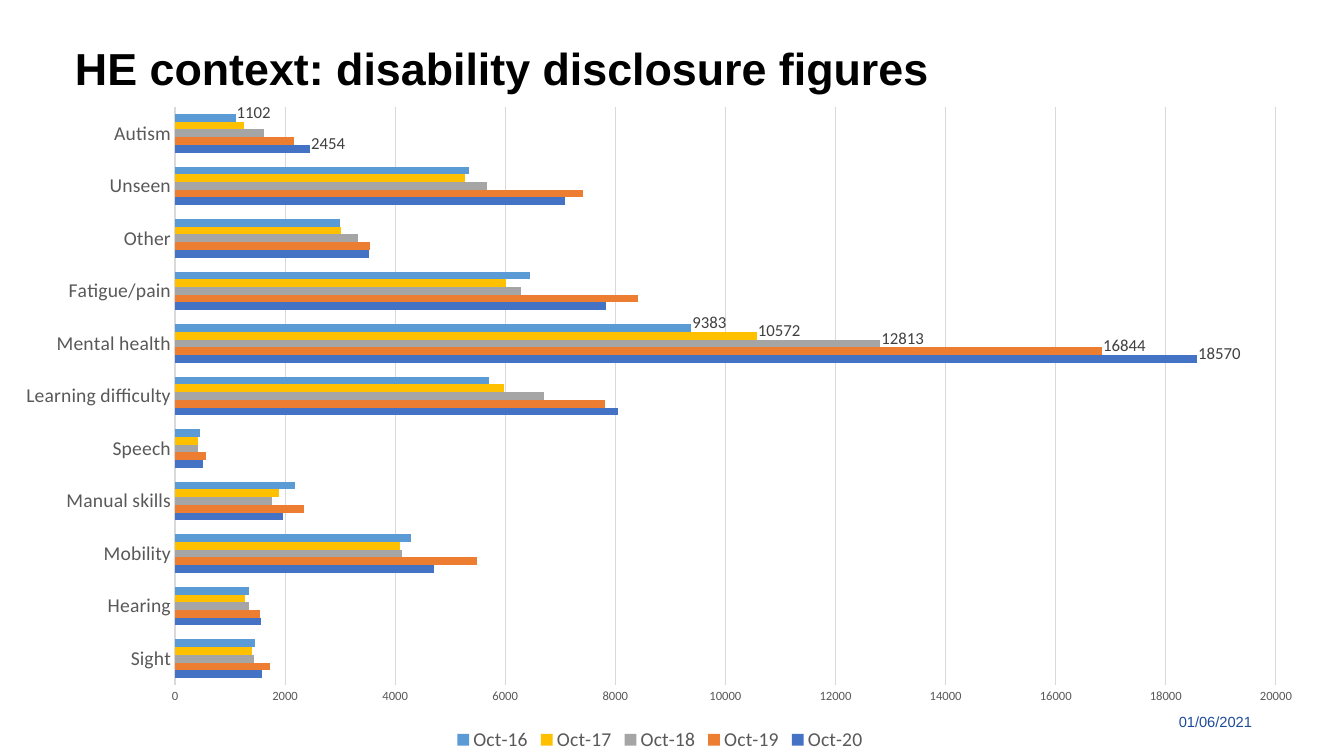
from dataclasses import dataclass

from lxml import etree
from pptx import Presentation
from pptx import util as u
from pptx.chart.data import CategoryChartData
from pptx.dml.color import RGBColor
from pptx.enum import chart as ch, text
from pptx.oxml.ns import qn

PX_PER_INCH = 100.8
GREY, GRID = "595959", "D9D9D9"
LABEL_SHIFT = (-3, -5)


@dataclass
class Box:
    left: int
    top: int
    width: int
    height: int

    def emu(self) -> list[u.Emu]:
        return [px(n) for n in (self.left, self.top, self.width, self.height)]


@dataclass
class Label:
    words: str
    box: Box
    size: float
    color: str
    bold: bool = False
    align: text.PP_ALIGN = text.PP_ALIGN.LEFT
    insets: tuple[int, int, int, int] = (10, 5, 10, 5)
    line_spacing: float = 1.0


@dataclass
class Year:
    name: str
    color: str
    counts: list[int]
    labelled: tuple[str, ...] = ("Mental health",)


def px(n: int) -> u.Emu:
    return u.Emu(round(n * u.Inches(1) / PX_PER_INCH))


def rgb(color: str) -> RGBColor:
    return RGBColor.from_string(color)


def style(font, size: float, color: str, name: str = "Calibri", bold: bool = False) -> None:
    font.size, font.name, font.bold = u.Pt(size), name, bold
    font.color.rgb = rgb(color)


def rule(line) -> None:
    line.color.rgb, line.width = rgb(GRID), u.Pt(0.75)


def add_label(slide, label: Label) -> None:
    frame = slide.shapes.add_textbox(*label.box.emu()).text_frame
    frame.word_wrap = True
    (frame.margin_left, frame.margin_top,
     frame.margin_right, frame.margin_bottom) = map(px, label.insets)
    paragraph = frame.paragraphs[0]
    paragraph.text, paragraph.alignment = label.words, label.align
    paragraph.line_spacing = label.line_spacing
    style(paragraph.font, label.size, label.color, "Arial", label.bold)


def set_layout(parent, index: int, settings: dict[str, str | float]) -> None:
    """Give a chart part a manual layout as its child at the index."""
    for old in parent.findall(qn("c:layout")):
        parent.remove(old)
    layout = etree.Element(qn("c:layout"))
    manual = etree.SubElement(layout, qn("c:manualLayout"))
    for tag, value in settings.items():
        etree.SubElement(manual, qn(f"c:{tag}")).set("val", str(value))
    parent.insert(index, layout)


def add_disclosure_chart(slide, frame: Box, plot: Box,
                         disabilities: list[str], years: list[Year]) -> None:
    data = CategoryChartData()
    data.categories = disabilities
    for year in years:
        data.add_series(year.name, year.counts)
    chart = slide.shapes.add_chart(ch.XL_CHART_TYPE.BAR_CLUSTERED, *frame.emu(), data).chart
    style(chart.font, 10, "000000")
    chart.has_title = False
    set_layout(chart._chartSpace.chart.plotArea, 0, {
        "layoutTarget": "inner", "xMode": "edge", "yMode": "edge",
        "x": (plot.left - frame.left) / frame.width,
        "y": (plot.top - frame.top) / frame.height,
        "w": plot.width / frame.width,
        "h": plot.height / frame.height,
    })

    # Legend
    chart.has_legend = True
    chart.legend.position = ch.XL_LEGEND_POSITION.BOTTOM
    chart.legend.include_in_layout = False
    style(chart.legend.font, 14, GREY)

    # Axes
    for axis, size in ((chart.category_axis, 14), (chart.value_axis, 9)):
        axis.major_tick_mark = axis.minor_tick_mark = ch.XL_TICK_MARK.NONE
        style(axis.tick_labels.font, size, GREY)
    rule(chart.category_axis.format.line)
    counts_axis = chart.value_axis
    counts_axis.minimum_scale, counts_axis.maximum_scale = 0, 20000
    counts_axis.major_unit = 2000
    counts_axis.format.line.fill.background()
    rule(counts_axis.major_gridlines.format.line)

    # Bars and their selected value labels, nudged clear of the bar below
    bars = chart.plots[0]
    bars.gap_width, bars.vary_by_categories = 182, False
    right, down = LABEL_SHIFT
    for year, series in zip(years, bars.series):
        series.format.fill.solid()
        series.format.fill.fore_color.rgb = rgb(year.color)
        series.invert_if_negative = False
        for disability in year.labelled:
            value_label = series.points[disabilities.index(disability)].data_label
            style(value_label.font, 12, "404040")
            value_label.position = ch.XL_LABEL_POSITION.OUTSIDE_END
            set_layout(value_label._get_or_add_dLbl(), 1,
                       {"x": right / frame.width, "y": down / frame.height})


TITLE = Label("HE context: disability disclosure figures", Box(71, 45, 990, 57), 32, "000000",
              bold=True, insets=(4, 4, 2, 4), line_spacing=0.85)
DATE = Label("01/06/2021", Box(1116, 708, 146, 28), 10.5, "1E4B9B", align=text.PP_ALIGN.RIGHT)

DISABILITIES = ["Sight", "Hearing", "Mobility", "Manual skills", "Speech", "Learning difficulty",
                "Mental health", "Fatigue/pain", "Other", "Unseen", "Autism"]
FIRST_AND_LAST = ("Mental health", "Autism")
YEARS = [
    Year("Oct-20", "4472C4",
         [1572, 1555, 4700, 1955, 506, 8048, 18570, 7837, 3526, 7088, 2454], FIRST_AND_LAST),
    Year("Oct-19", "ED7D31",
         [1724, 1550, 5492, 2347, 572, 7815, 16844, 8417, 3538, 7409, 2154]),
    Year("Oct-18", "A5A5A5",
         [1426, 1350, 4126, 1771, 425, 6699, 12813, 6293, 3318, 5664, 1623]),
    Year("Oct-17", "FFC000",
         [1404, 1280, 4083, 1897, 416, 5980, 10572, 6015, 3018, 5270, 1263]),
    Year("Oct-16", "5B9BD5",
         [1462, 1348, 4291, 2182, 452, 5700, 9383, 6449, 3006, 5341, 1102], FIRST_AND_LAST),
]


def main() -> None:
    deck = Presentation()
    deck.slide_width, deck.slide_height = px(1344), px(756)
    slide = deck.slides.add_slide(deck.slide_layouts[6])
    add_label(slide, DATE)
    add_label(slide, TITLE)
    add_disclosure_chart(slide, Box(0, 94, 1320, 662), Box(175, 107, 1101, 578),
                         DISABILITIES, YEARS)
    deck.save("out.pptx")


if __name__ == "__main__":
    main()
